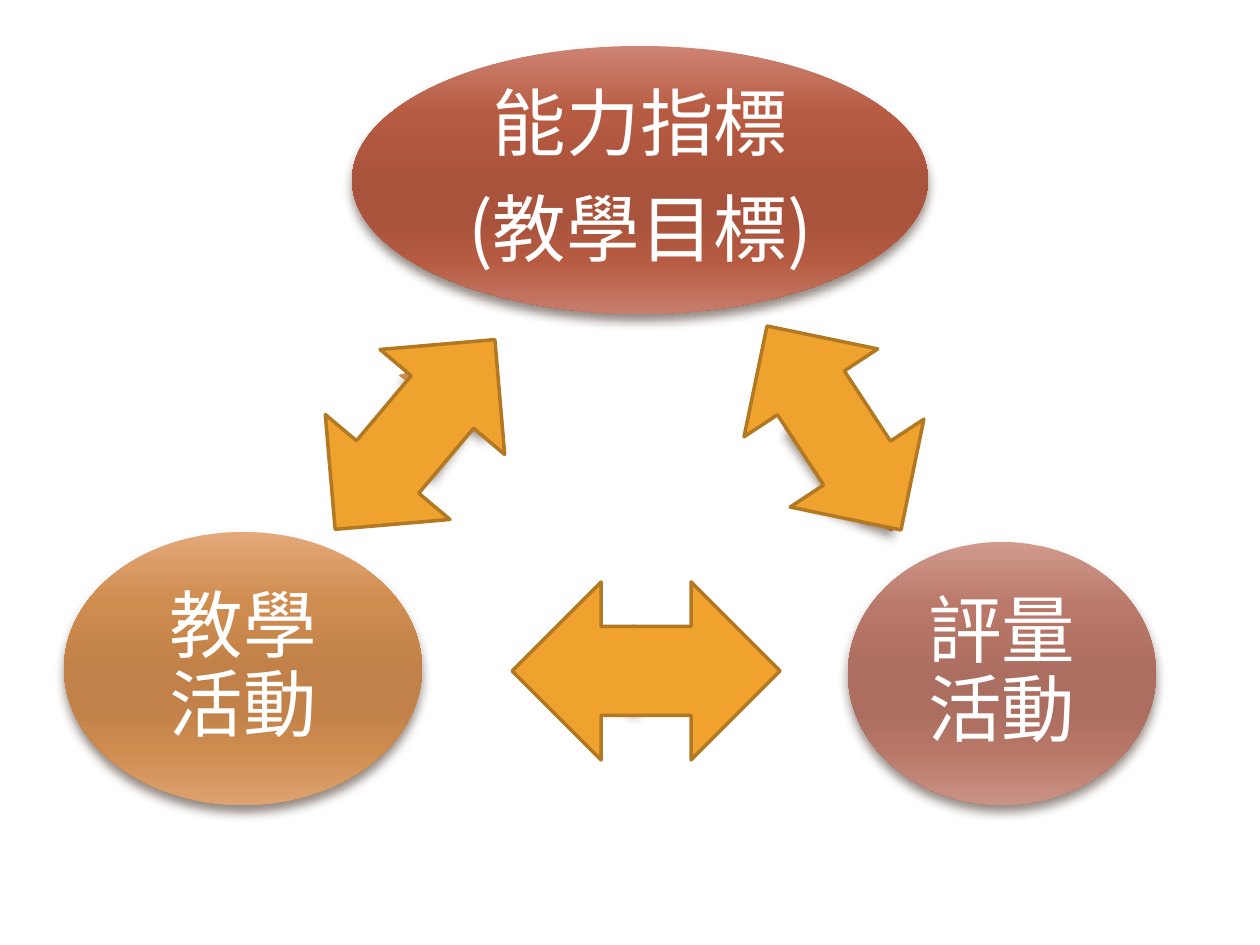
from dataclasses import dataclass

from lxml.etree import SubElement
from pptx import Presentation
from pptx.dml.color import RGBColor
from pptx.enum.shapes import MSO_SHAPE as Shape
from pptx.enum.text import MSO_ANCHOR as Anchor, PP_ALIGN as Align
from pptx.oxml.ns import qn
from pptx.util import Emu, Pt

PX = 914400 // 126
FONT = "Noto Sans CJK SC"
COLORS = {
    "white": "FFFFFF",
    "shadow": "4E3B30",
    "arrow": "F0A22E",
    "outline": "B27822",
}
STOPS = (0, 25, 50, 65, 80, 100)
GRADIENTS = {
    "goal": ("CD8473", "B75B42", "AA533C", "AA533C", "B65B42", "C77D6B"),
    "assessment": ("D09A8D", "B97869", "AB6E60", "AB6E60", "B87868", "CA9386"),
    "teaching": ("E4A97A", "D08D50", "C18148", "C18148", "CF8C4F", "DEA372"),
}


@dataclass
class Oval:
    x: int
    y: int
    w: int
    h: int
    gradient: str
    inset: int
    text: str


@dataclass
class Arrow:
    x: int
    y: int
    w: int
    h: int
    rotation: float
    gradient: str = ""


OVALS = [
    Oval(352, 46, 576, 268, "goal", 0, "能力指標\n(教學目標)"),
    Oval(848, 542, 308, 263, "assessment", 25, "評量活動"),
    Oval(64, 532, 358, 273, "teaching", 25, "教學活動"),
]
CYCLE_ARROWS = [
    Arrow(805, 438, 94, 62, 229.9, "goal"),
    Arrow(600, 651, 97, 43, 0, "assessment"),
    Arrow(383, 392, 98, 57, 120.9, "teaching"),
    Arrow(777, 422, 147, 98, 55, "goal"),
    Arrow(563, 625, 146, 86, 177, "assessment"),
    Arrow(379, 353, 127, 106, 305.5, "teaching"),
]
DOUBLE_ARROWS = [
    Arrow(712, 348, 244, 160, 56.7),
    Arrow(512, 582, 268, 178, 180),
    Arrow(291, 353, 248, 163, 130.1),
]


def rgb(name: str) -> RGBColor:
    return RGBColor.from_string(COLORS[name])


def add_preset(slide, kind: Shape, item: Oval | Arrow):
    sp = slide.shapes.add_shape(
        kind, *(Emu(v * PX) for v in (item.x, item.y, item.w, item.h))
    )
    sp.shadow.inherit = False
    return sp


def add_glossy(slide, kind: Shape, item: Oval | Arrow):
    sp = add_preset(slide, kind, item)
    sp.line.fill.background()
    sp.fill.gradient()
    sp.fill.gradient_angle = 270
    props = sp._element.spPr
    stops = props.find(qn("a:gradFill")).find(qn("a:gsLst"))
    for old in list(stops):
        stops.remove(old)
    for pos, color in zip(STOPS, GRADIENTS[item.gradient]):
        stop = SubElement(stops, qn("a:gs"), pos=str(pos * 1000))
        SubElement(stop, qn("a:srgbClr"), val=color)
    shadow = SubElement(
        props.find(qn("a:effectLst")), qn("a:outerShdw"),
        blurRad=str(Pt(6)), dist=str(Pt(4)), dir="5400000", rotWithShape="0",
    )
    color = SubElement(shadow, qn("a:srgbClr"), val=COLORS["shadow"])
    SubElement(color, qn("a:alpha"), val="60000")
    return sp


def add_oval(slide, oval: Oval) -> None:
    sp = add_glossy(slide, Shape.OVAL, oval)
    tf = sp.text_frame
    tf.text = oval.text
    tf.word_wrap = True
    tf.vertical_anchor = Anchor.MIDDLE
    tf.margin_left = tf.margin_right = Emu(oval.inset * PX)
    tf.margin_top = tf.margin_bottom = 0
    for p in tf.paragraphs:
        p.alignment = Align.CENTER
        p.line_spacing = 0.9
        p.space_after = Pt(15)
        for r in p.runs:
            r.font.size = Pt(42)
            r.font.name = FONT
            r.font.color.rgb = rgb("white")
            SubElement(r.font._element, qn("a:ea"), typeface=FONT)


def add_cycle_arrow(slide, arrow: Arrow) -> None:
    sp = add_glossy(slide, Shape.RIGHT_ARROW, arrow)
    sp.rotation = arrow.rotation
    sp.adjustments[0] = 0.6
    sp.adjustments[1] = round(arrow.w / arrow.h / 2, 2)


def add_double_arrow(slide, arrow: Arrow) -> None:
    sp = add_preset(slide, Shape.LEFT_RIGHT_ARROW, arrow)
    sp.rotation = arrow.rotation
    sp.fill.solid()
    sp.fill.fore_color.rgb = rgb("arrow")
    sp.line.color.rgb = rgb("outline")
    sp.line.width = Pt(2)


def main() -> None:
    prs = Presentation()
    prs.slide_width = Emu(1260 * PX)
    prs.slide_height = Emu(945 * PX)
    slide = prs.slides.add_slide(prs.slide_layouts[6])
    for oval in OVALS:
        add_oval(slide, oval)
    for arrow in CYCLE_ARROWS:
        add_cycle_arrow(slide, arrow)
    for arrow in DOUBLE_ARROWS:
        add_double_arrow(slide, arrow)
    prs.save("out.pptx")


if __name__ == "__main__":
    main()
